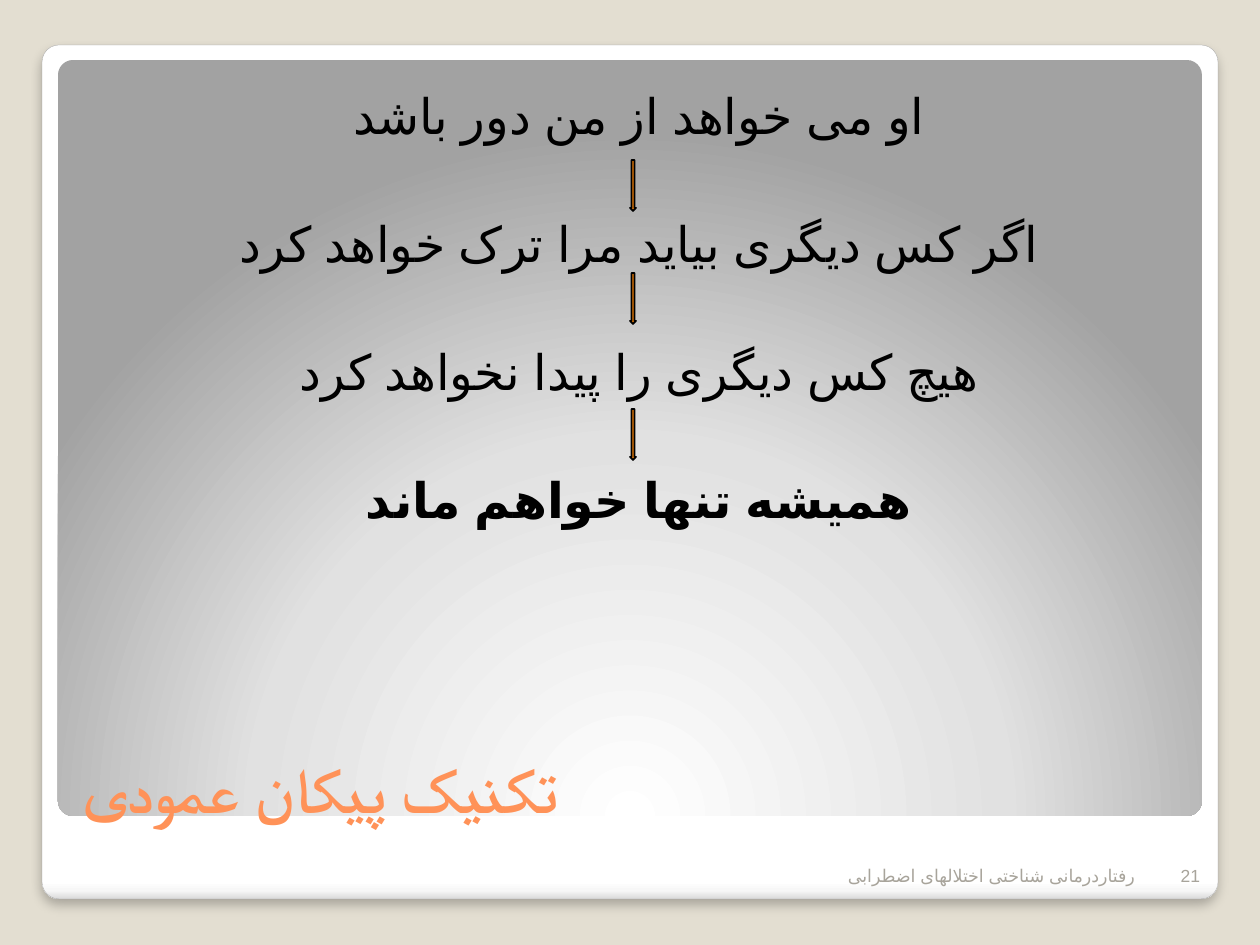
from lxml import etree
from pptx import Presentation
from pptx.dml.color import RGBColor
from pptx.enum.shapes import MSO_SHAPE
from pptx.enum.text import MSO_ANCHOR, PP_ALIGN
from pptx.oxml import parse_xml
from pptx.oxml.ns import nsdecls, qn
from pptx.util import Emu, Pt

BACKGROUND = RGBColor(0xE3, 0xDE, 0xD1)
FRAME_LINE = RGBColor(0xA4, 0xA4, 0xA4)
TITLE_ORANGE = RGBColor(0xFF, 0x92, 0x58)
ARROW_ORANGE = RGBColor(0xF0, 0x7F, 0x09)
FOOTER_GRAY = RGBColor(0xA8, 0xA4, 0x9B)
BLACK = RGBColor(0, 0, 0)


def px(length):
    return Emu(round(length * 914400 / 126))


def add_text(lines, box, size, color, font="Arial", bold_lines=(),
             align=PP_ALIGN.LEFT, anchor=MSO_ANCHOR.BOTTOM,
             insets=(13, 6, 13, 6), first_gap=0, gap=0):
    """Add a right-to-left text box with one paragraph per line."""
    frame = slide.shapes.add_textbox(*map(px, box)).text_frame
    frame.word_wrap = True
    frame.vertical_anchor = anchor
    (frame.margin_left, frame.margin_top,
     frame.margin_right, frame.margin_bottom) = map(px, insets)
    for index, line in enumerate(lines):
        paragraph = frame.paragraphs[0] if index == 0 else frame.add_paragraph()
        paragraph.alignment = align
        paragraph.space_before = Pt(gap if index else first_gap)
        paragraph._p.get_or_add_pPr().set("rtl", "1")
        run = paragraph.add_run()
        run.text = line
        run.font.size = Pt(size)
        run.font.bold = line in bold_lines
        run.font.color.rgb = color
        run.font.name = font
        # Persian text takes the complex-script font and its own language
        properties = run._r.get_or_add_rPr()
        properties.set("lang", "fa-IR")
        etree.SubElement(properties, qn("a:cs")).set("typeface", font)


presentation = Presentation()
presentation.slide_width = px(1260)
presentation.slide_height = px(945)
slide = presentation.slides.add_slide(presentation.slide_layouts[6])
slide.background.fill.solid()
slide.background.fill.fore_color.rgb = BACKGROUND

# Rounded frame and the gray panel inside it
FRAME_STOPS = ((0, "FFFFFF"), (98, "FFFFFF"), (99, "F7F7F7"), (100, "DADADA"))
PANEL_STOPS = ((0, "FFFFFF"), (55, "E1E1E1"), (100, "A2A2A2"))
LINEAR = '<a:lin ang="5400000" scaled="0"/>'
RADIAL = ('<a:path path="circle"><a:fillToRect l="50000" t="175000" '
          'r="50000" b="-75000"/></a:path>')
panels = []
for box, stops, direction in (
    ((42, 45, 1176, 854), FRAME_STOPS, LINEAR),
    ((58, 60, 1144, 756), PANEL_STOPS, RADIAL),
):
    panel = slide.shapes.add_shape(MSO_SHAPE.ROUNDED_RECTANGLE, *map(px, box))
    panel.adjustments[0] = 0.02
    panel.shadow.inherit = False
    panel.line.fill.background()
    stop_xml = "".join(
        f'<a:gs pos="{position * 1000}"><a:srgbClr val="{color}"/></a:gs>'
        for position, color in stops)
    panel._element.spPr.find(qn("a:ln")).addprevious(parse_xml(
        f'<a:gradFill {nsdecls("a")} rotWithShape="1">'
        f"<a:gsLst>{stop_xml}</a:gsLst>{direction}</a:gradFill>"))
    panels.append(panel)

# Thin outline and soft shadow of the frame
frame_panel = panels[0]
frame_panel.line.color.rgb = FRAME_LINE
frame_panel.line.width = Pt(0.16)
frame_panel._element.spPr.find(qn("a:effectLst")).append(parse_xml(
    f'<a:outerShdw {nsdecls("a")} blurRad="{Pt(6)}" dist="{Pt(4)}" '
    'dir="5400000" rotWithShape="0"><a:srgbClr val="000000">'
    '<a:alpha val="25000"/></a:srgbClr></a:outerShdw>'))

# Title
title = "تکنیک پیکان عمودی"
add_text([title], (69, 687, 1128, 145), 36, TITLE_ORANGE,
         font="Times New Roman", bold_lines=[title])

# Chain of thoughts
thoughts = [
    "او می خواهد از من دور باشد",
    "اگر کس دیگری بیاید مرا ترک خواهد کرد",
    "هیچ کس دیگری را پیدا نخواهد کرد",
    "همیشه تنها خواهم ماند",
]
add_text(thoughts, (69, 73, 1128, 577), 28, BLACK, bold_lines=thoughts[-1:],
         align=PP_ALIGN.CENTER, anchor=MSO_ANCHOR.TOP,
         insets=(25, 13, 13, 6), first_gap=2.5, gap=39.4)

# Arrows between the thoughts
for top in (160, 273, 409):
    arrow = slide.shapes.add_shape(
        MSO_SHAPE.DOWN_ARROW, px(630), px(top), px(6), px(51))
    arrow.shadow.inherit = False
    arrow.fill.solid()
    arrow.fill.fore_color.rgb = ARROW_ORANGE
    arrow.line.color.rgb = BLACK
    arrow.line.width = Pt(1)

# Slide number and footer
add_text(["21"], (1150, 842, 63, 50), 10, FOOTER_GRAY, align=PP_ALIGN.RIGHT)
add_text(["رفتاردرمانی شناختی اختلالهای اضطرابی"], (835, 842, 315, 50), 10,
         FOOTER_GRAY)

presentation.save("out.pptx")
